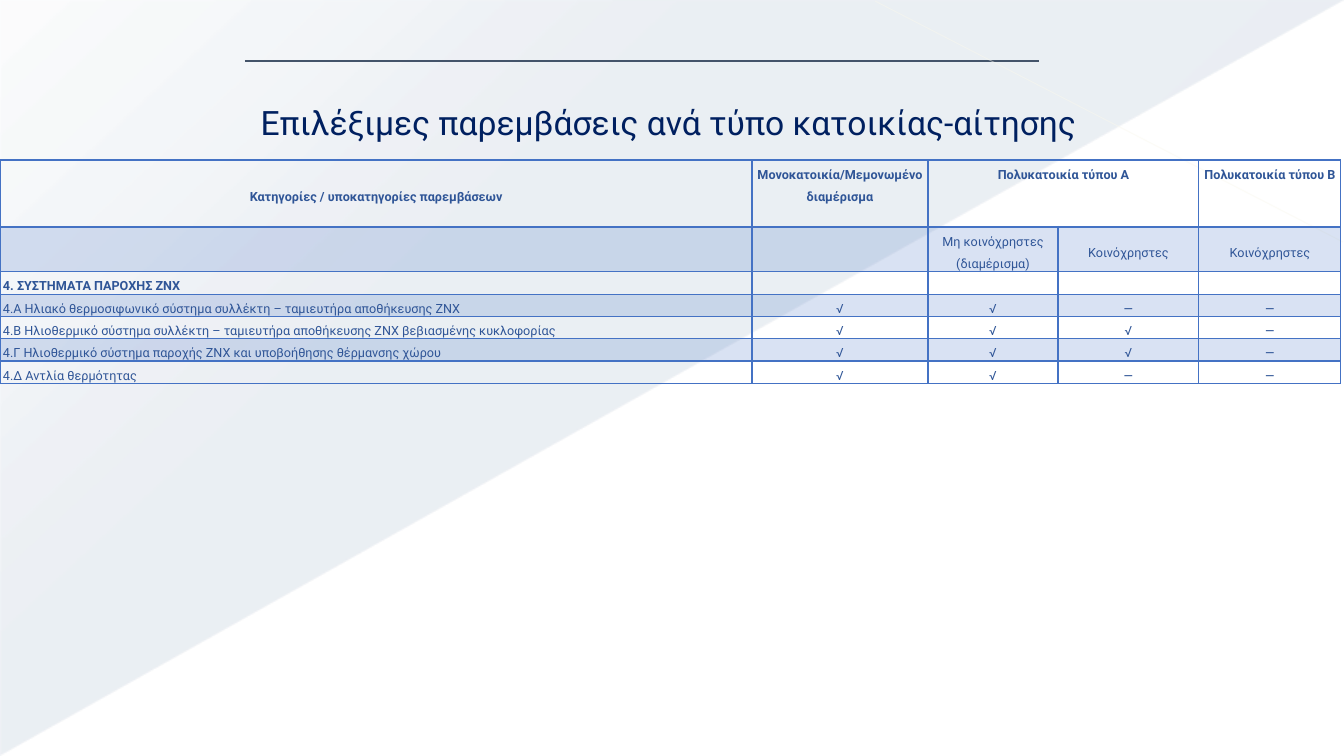
from lxml.etree import SubElement
from pptx import Presentation
from pptx.dml.color import RGBColor
from pptx.enum.shapes import MSO_CONNECTOR as Connector, MSO_SHAPE as Shape
from pptx.enum.text import MSO_ANCHOR as Anchor, PP_ALIGN as Align
from pptx.oxml import parse_xml
from pptx.oxml.ns import nsdecls, qn
from pptx.util import Emu, Pt

EMU_PER_INCH = 914400
PX_PER_INCH = 100.8
BLUE = "4472C4"
TABLE_TEXT = "2F5597"
HEADERS = ["Κατηγορίες / υποκατηγορίες παρεμβάσεων", "Μονοκατοικία/Μεμονωμένο διαμέρισμα",
           "Πολυκατοικία τύπου Α", "", "Πολυκατοικία τύπου Β"]
ROWS = [
    HEADERS,
    ["", "", "Μη κοινόχρηστες (διαμέρισμα)", "Κοινόχρηστες", "Κοινόχρηστες"],
    ["4. ΣΥΣΤΗΜΑΤΑ ΠΑΡΟΧΗΣ ΖΝΧ", "", "", "", ""],
    ["4.Α Ηλιακό θερμοσιφωνικό σύστημα συλλέκτη – ταμιευτήρα αποθήκευσης ΖΝΧ", "√", "√", "─", "─"],
    ["4.Β Ηλιoθερμικό σύστημα συλλέκτη – ταμιευτήρα αποθήκευσης ΖΝΧ βεβιασμένης κυκλοφορίας",
     "√", "√", "√", "─"],
    ["4.Γ Ηλιoθερμικό σύστημα παροχής ΖΝΧ και υποβοήθησης θέρμανσης χώρου", "√", "√", "√", "─"],
    ["4.Δ Αντλία θερμότητας", "√", "√", "─", "─"],
]
COLUMN_WIDTHS = [752, 176, 130, 141, 142]
ROW_HEIGHTS = [67, 44, 23, 22, 22, 22, 22]


def px(length):
    """Turn pixels into EMU."""
    return Emu(round(length * EMU_PER_INCH / PX_PER_INCH))


def rgb(value):
    """Turn a hex string into a colour."""
    return RGBColor.from_string(value)


def write(frame, text, size=9, color=TABLE_TEXT, font="Roboto", bold=False,
          align=Align.LEFT, spacing=1.5):
    """Put one formatted paragraph into a text frame."""
    frame.word_wrap = True
    paragraph = frame.paragraphs[0]
    paragraph.alignment = align
    paragraph.line_spacing = spacing
    if not text:
        SubElement(paragraph._p, qn("a:endParaRPr"), sz=str(size * 100))
        return
    run = paragraph.add_run()
    run.text = text
    run.font.size = Pt(size)
    run.font.name = font
    run.font.bold = bold
    run.font.color.rgb = rgb(color)


def set_alpha(fill, percent):
    """Make a solid fill or line fill partly transparent."""
    color = fill._xPr.find(".//" + qn("a:srgbClr"))
    SubElement(color, qn("a:alpha"), val=str(percent * 1000))


def add_backdrop(slide):
    """Draw the pale triangle behind the slide."""
    triangle = slide.shapes.add_shape(Shape.RIGHT_TRIANGLE, px(1), px(1), px(1342), px(754))
    triangle.shadow.inherit = False
    triangle.rotation = 180
    triangle._element.spPr.find(qn("a:xfrm")).set("flipH", "1")
    triangle.line.fill.background()
    stops = "".join(
        f'<a:gs pos="{position}000"><a:srgbClr val="1F497D"><a:alpha val="{alpha}000"/>'
        "</a:srgbClr></a:gs>" for position, alpha in [(0, 10), (70, 8), (100, 1)])
    gradient = parse_xml(f'<a:gradFill {nsdecls("a")} rotWithShape="1"><a:gsLst>{stops}</a:gsLst>'
                         '<a:lin ang="7980000" scaled="0"/></a:gradFill>')
    triangle._element.spPr.find(qn("a:prstGeom")).addnext(gradient)


def add_line(slide, start, end, color, width, alpha=100):
    """Draw a straight line between two points."""
    line = slide.shapes.add_connector(Connector.STRAIGHT, *map(px, start + end))
    line.line.color.rgb = rgb(color)
    line.line.width = Pt(width)
    if alpha < 100:
        set_alpha(line.line.fill, alpha)
    SubElement(line._element.spPr, qn("a:effectLst"))


def set_title(slide, text):
    """Place and fill the title above the backdrop."""
    title = slide.shapes.title
    title.left, title.top, title.width, title.height = map(px, (89, 96, 1159, 58))
    title.text_frame.vertical_anchor = Anchor.MIDDLE
    write(title.text_frame, text, size=24, color="002060", align=Align.CENTER, spacing=0.9)
    slide.shapes._spTree.append(title._element)


def set_borders(cell, top, bottom):
    """Draw the four borders of a cell, widths in points."""
    properties = cell._tc.get_or_add_tcPr()
    widths = {"lnL": 1, "lnR": 1, "lnT": top, "lnB": bottom}
    for index, (side, width) in enumerate(widths.items()):
        properties.insert(index, parse_xml(
            f'<a:{side} {nsdecls("a")} w="{Pt(width)}"><a:solidFill><a:srgbClr val="{BLUE}"/>'
            f"</a:solidFill></a:{side}>"))


def format_cell(cell, text, row, column):
    """Fill, border and write one table cell."""
    cell.margin_left = cell.margin_right = px(3)
    cell.margin_top = cell.margin_bottom = 0
    cell.vertical_anchor = Anchor.TOP if row == 0 and column else Anchor.MIDDLE
    if row % 2:
        cell.fill.solid()
        cell.fill.fore_color.rgb = rgb(BLUE)
        set_alpha(cell.fill, 20)
    else:
        cell.fill.background()
    set_borders(cell, top=2 if row == 1 else 1, bottom=2 if row == 0 else 1)
    align = Align.CENTER if column or row == 0 else Align.LEFT
    write(cell.text_frame, text, bold=row in (0, 2), align=align)


def add_interventions_table(slide):
    """Add the table of interventions by housing type."""
    table = slide.shapes.add_table(len(ROWS), len(COLUMN_WIDTHS), 0, px(160),
                                   px(sum(COLUMN_WIDTHS)), px(sum(ROW_HEIGHTS))).table
    table.first_row = table.horz_banding = False
    for column, width in zip(table.columns, COLUMN_WIDTHS):
        column.width = px(width)
    for row, height in zip(table.rows, ROW_HEIGHTS):
        row.height = px(height)
    for row, texts in enumerate(ROWS):
        for column, text in enumerate(texts):
            format_cell(table.cell(row, column), text, row, column)
    table.cell(0, 2).merge(table.cell(0, 3))


def main():
    """Build and save the slide."""
    presentation = Presentation()
    presentation.slide_width, presentation.slide_height = px(1344), px(756)
    slide = presentation.slides.add_slide(presentation.slide_layouts[5])
    add_backdrop(slide)
    add_line(slide, (245, 61), (1039, 61), "44546A", 1)
    add_line(slide, (1343, 242), (875, 1), "FAF8EE", 0.75, alpha=45)
    set_title(slide, "Επιλέξιμες παρεμβάσεις ανά τύπο κατοικίας-αίτησης")
    add_interventions_table(slide)
    presentation.save("out.pptx")


if __name__ == "__main__":
    main()
